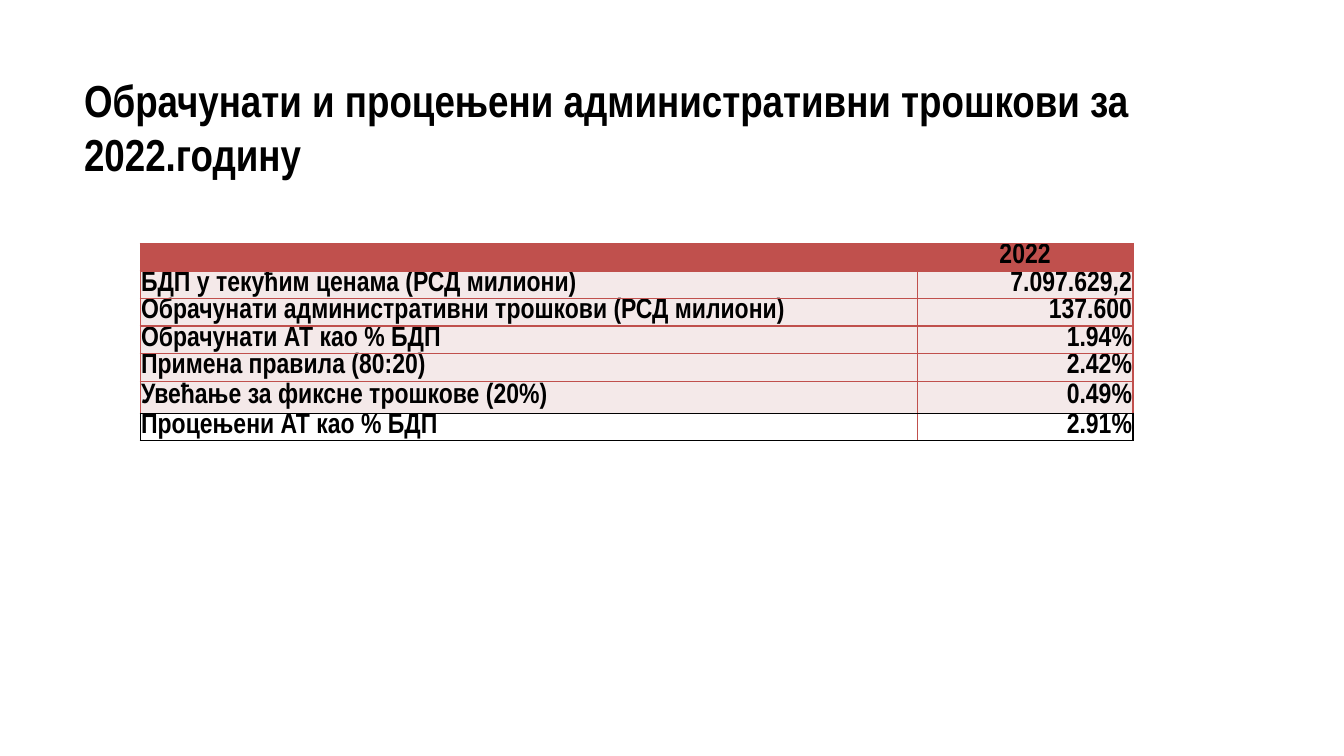
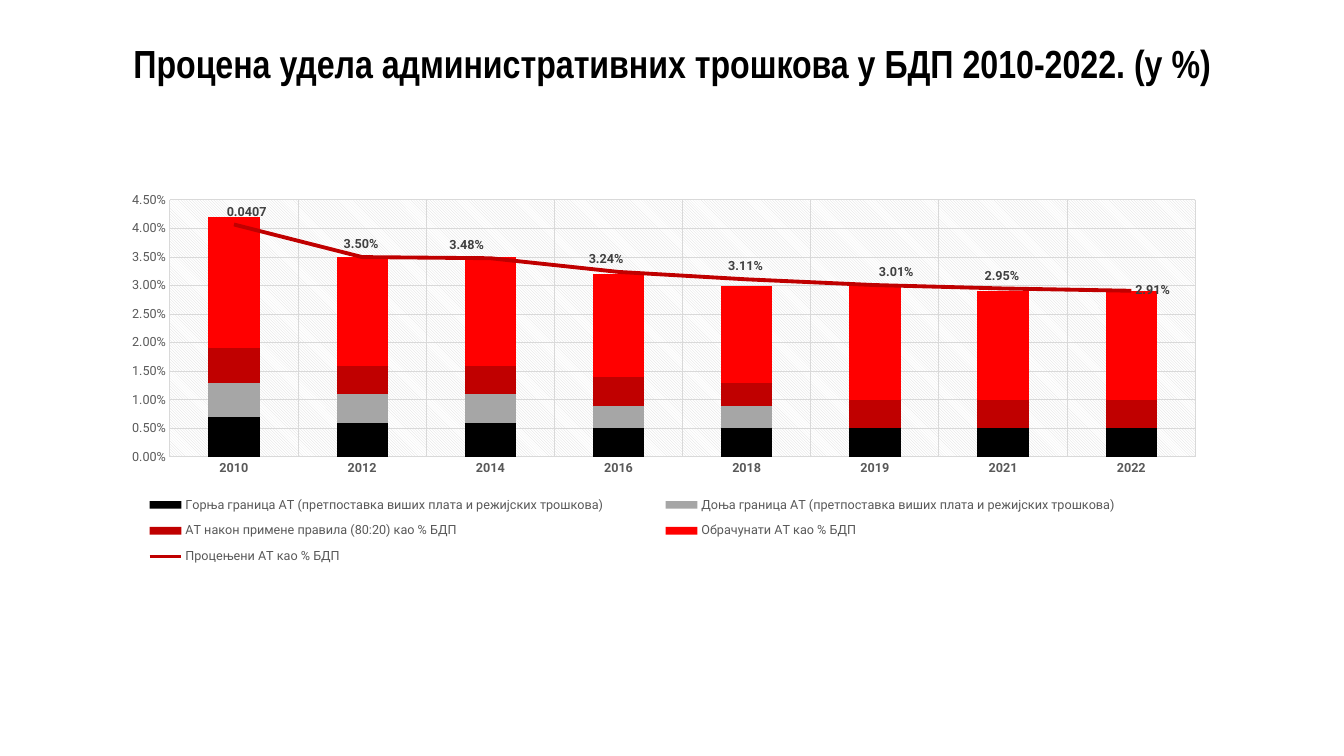
from lxml import etree
from pptx import Presentation
from pptx.chart.data import CategoryChartData
from pptx.dml.color import RGBColor
from pptx.enum import chart as ch, text
from pptx.oxml import parse_xml
from pptx.oxml.ns import nsdecls, qn
from pptx.util import Pt

COLORS = {
    "black": "000000", "white": "FFFFFF", "header": "C0504D", "row": "F4E9E9",
    "silver": "A6A6A6", "crimson": "C00000", "red": "FF0000",
    "axis": "595959", "grid": "D9D9D9", "label": "404040",
}
TITLE_FONT = "Arial Narrow"
CHART_FONT = "Roboto"
ALIGN = text.PP_ALIGN

COSTS = [
    ("", "2022"),
    ("БДП у текућим ценама (РСД милиони)", "7.097.629,2"),
    ("Обрачунати административни трошкови (РСД милиони)", "137.600"),
    ("Обрачунати АТ као % БДП", "1.94%"),
    ("Примена правила (80:20)", "2.42%"),
    ("Увећање за фиксне трошкове (20%)", "0.49%"),
    ("Процењени АТ као % БДП", "2.91%"),
]
YEARS = ["2010", "2012", "2014", "2016", "2018", "2019", "2021", "2022"]
SHARES = [
    ("Горња граница АТ (претпоставка виших плата и режијских трошкова)", "black",
     [0.007, 0.006, 0.006, 0.005, 0.005, 0.005, 0.005, 0.005]),
    ("Доња граница АТ (претпоставка виших плата и режијских трошкова)", "silver",
     [0.006, 0.005, 0.005, 0.004, 0.004, 0, None, None]),
    ("АТ након примене правила (80:20) као % БДП", "crimson",
     [0.006, 0.005, 0.005, 0.005, 0.004, 0.005, 0.005, 0.005]),
    ("Обрачунати АТ као % БДП", "red",
     [0.023, 0.019, 0.019, 0.018, 0.017, 0.02, 0.019, 0.019]),
    ("Процењени АТ као % БДП", "crimson",
     [0.0407, 0.035, 0.0348, 0.0324, 0.0311, 0.0301, 0.0295, 0.0291]),
]
LABEL_SHIFTS = [-0.01, -0.02, -0.04, -0.03, -0.02, 0, -0.02]
LABEL_RISE = -0.03


def rgb(name):
    return RGBColor.from_string(COLORS[name])


def style_font(font, face, size, color, bold=False):
    font.name = face
    font.size = Pt(size)
    font.bold = bold
    font.color.rgb = rgb(color)


def style_line(line, color, width):
    line.color.rgb = rgb(color)
    line.width = Pt(width)


def add_title(slide, box, wording, size, align):
    frame = slide.shapes.add_textbox(*map(Pt, box)).text_frame
    frame.word_wrap = True
    frame.margin_left = frame.margin_right = frame.margin_top = frame.margin_bottom = 0
    heading = frame.paragraphs[0]
    heading.alignment = align
    run = heading.add_run()
    run.text = wording
    style_font(run.font, TITLE_FONT, size, "black", True)


def set_borders(cell, **sides):
    for place, side in enumerate("LRTB"):
        cell.fill._xPr.insert(place, parse_xml(
            f'<a:ln{side} {nsdecls("a")} w="12700"><a:solidFill>'
            f'<a:srgbClr val="{COLORS[sides.get(side, "header")]}"/>'
            f'</a:solidFill></a:ln{side}>'))


def fill_cell(cell, wording, align, fill, borders):
    cell.fill.solid()
    cell.fill.fore_color.rgb = rgb(fill)
    set_borders(cell, **borders)
    cell.vertical_anchor = text.MSO_ANCHOR.MIDDLE
    cell.margin_left = cell.margin_right = Pt(0.72)
    cell.margin_top = Pt(0.4)
    cell.margin_bottom = 0
    entry = cell.text_frame.paragraphs[0]
    entry.alignment = align
    entry.line_spacing = 0.8
    if wording:
        run = entry.add_run()
        run.text = wording
        style_font(run.font, TITLE_FONT, 20, "black", True)
    else:
        etree.SubElement(entry._p, qn("a:endParaRPr")).set("sz", "1000")


def add_cost_table(slide, box):
    table = slide.shapes.add_table(len(COSTS), 2, *map(Pt, box)).table
    table.first_row = table.horz_banding = False
    for column, width in zip(table.columns, (555.1, box[2] - 555.1)):
        column.width = Pt(width)
    total = len(COSTS) - 1
    for r, entries in enumerate(COSTS):
        table.rows[r].height = Pt(23 if r == total - 1 else 19.6)
        fill = "header" if r == 0 else "white" if r == total else "row"
        for c, wording in enumerate(entries):
            borders = {}
            if r == total - 1:
                borders = {"B": "black"}
            elif r == total:
                borders = {"T": "black", "B": "black", "LR"[c]: "black"}
            align = ALIGN.LEFT if c == 0 else ALIGN.CENTER if r == 0 else ALIGN.RIGHT
            fill_cell(table.cell(r, c), wording, align, fill, borders)


def manual_layout(inner=False, edge=False, **spots):
    layout = etree.Element(qn("c:layout"))
    manual = etree.SubElement(layout, qn("c:manualLayout"))
    if inner:
        etree.SubElement(manual, qn("c:layoutTarget")).set("val", "inner")
    if edge:
        for mode in ("xMode", "yMode"):
            etree.SubElement(manual, qn(f"c:{mode}")).set("val", "edge")
    for key, value in spots.items():
        etree.SubElement(manual, qn(f"c:{key}")).set("val", str(value))
    return layout


def split_off_line(chart):
    bars = chart._chartSpace.find(".//" + qn("c:barChart"))
    estimate = bars.findall(qn("c:ser"))[-1]
    for invert in estimate.findall(qn("c:invertIfNegative")):
        estimate.remove(invert)
    lines = parse_xml(
        f'<c:lineChart {nsdecls("c")}><c:grouping val="standard"/>'
        '<c:varyColors val="0"/><c:marker val="1"/></c:lineChart>')
    lines.insert(2, estimate)
    for axis in bars.findall(qn("c:axId")):
        etree.SubElement(lines, qn("c:axId")).set("val", axis.get("val"))
    bars.addnext(lines)


def style_plot_area(chart):
    area = chart._chartSpace.find(".//" + qn("c:plotArea"))
    for layout in area.findall(qn("c:layout")):
        area.remove(layout)
    area.insert(0, manual_layout(True, True, x=0.07, y=0.08, w=0.91, h=0.61))
    area.append(parse_xml(
        f'<c:spPr {nsdecls("c", "a")}><a:pattFill prst="ltDnDiag">'
        f'<a:fgClr><a:srgbClr val="{COLORS["grid"]}"/></a:fgClr>'
        f'<a:bgClr><a:srgbClr val="{COLORS["white"]}"/></a:bgClr>'
        '</a:pattFill></c:spPr>'))


def style_axes(chart):
    for axis, bold in ((chart.category_axis, True), (chart.value_axis, False)):
        axis.major_tick_mark = axis.minor_tick_mark = ch.XL_TICK_MARK.NONE
        axis.has_major_gridlines = True
        style_line(axis.major_gridlines.format.line, "grid", 0.75)
        style_font(axis.tick_labels.font, CHART_FONT, 9, "axis", bold)
    style_line(chart.category_axis.format.line, "grid", 0.75)
    shares = chart.value_axis
    shares.format.line.fill.background()
    shares.minimum_scale, shares.maximum_scale, shares.major_unit = 0, 0.045, 0.005
    shares.tick_labels.number_format = "0.00%"
    shares.tick_labels.number_format_is_linked = False


def style_estimate(estimate):
    style_line(estimate.format.line, "crimson", 2.75)
    estimate.smooth = False
    estimate.marker.style = ch.XL_MARKER_STYLE.NONE
    labels = estimate.data_labels
    labels.show_value = True
    labels.number_format = "0.00%"
    labels.number_format_is_linked = False
    labels.position = ch.XL_LABEL_POSITION.RIGHT
    style_font(labels.font, CHART_FONT, 9, "label", True)
    for i, shift in enumerate(LABEL_SHIFTS):
        label = estimate.points[i].data_label
        if i == 0:
            run = label.text_frame.paragraphs[0].add_run()
            run.text = "0.0407"
            style_font(run.font, CHART_FONT, 9, "label", True)
        else:
            style_font(label.font, CHART_FONT, 9, "label", True)
        label.position = ch.XL_LABEL_POSITION.RIGHT
        spot = labels._element.findall(qn("c:dLbl"))[i]
        spot.find(qn("c:idx")).addnext(manual_layout(x=shift, y=LABEL_RISE))


def add_share_chart(slide, box):
    data = CategoryChartData(number_format="0.00%")
    data.categories = YEARS
    for name, _, values in SHARES:
        data.add_series(name, values)
    chart = slide.shapes.add_chart(
        ch.XL_CHART_TYPE.COLUMN_STACKED, *map(Pt, box), data).chart
    chart.has_title = False
    style_font(chart.font, CHART_FONT, 10, "black")
    split_off_line(chart)
    columns, line = chart.plots
    columns.gap_width, columns.overlap = 150, 100
    columns.vary_by_categories = False
    for series, (_, color, _) in zip(columns.series, SHARES):
        series.format.fill.solid()
        series.format.fill.fore_color.rgb = rgb(color)
    style_estimate(line.series[0])
    style_axes(chart)
    style_plot_area(chart)
    chart.has_legend = True
    legend = chart.legend
    legend.position = ch.XL_LEGEND_POSITION.BOTTOM
    legend.include_in_layout = False
    style_font(legend.font, CHART_FONT, 9, "axis")
    for layout in legend._element.findall(qn("c:layout")):
        legend._element.remove(layout)
    legend._element.find(qn("c:legendPos")).addnext(
        manual_layout(edge=True, x=0, y=0.76, w=0.96, h=0.21))


def main():
    deck = Presentation()
    deck.slide_width, deck.slide_height = Pt(960), Pt(540)
    blank = deck.slide_layouts[6]

    costs = deck.slides.add_slide(blank)
    add_title(costs, (60, 52, 860, 67),
              "Обрачунати и процењени административни трошкови за 2022.годину",
              32, ALIGN.LEFT)
    add_cost_table(costs, (100.1, 174, 709.2, 140.6))

    shares = deck.slides.add_slide(blank)
    add_title(shares, (51, 28, 858, 65),
              "Процена удела административних трошкова у БДП 2010-2022. (у %)",
              28, ALIGN.CENTER)
    add_share_chart(shares, (65, 118.8, 805, 301))

    deck.save("out.pptx")


if __name__ == "__main__":
    main()
